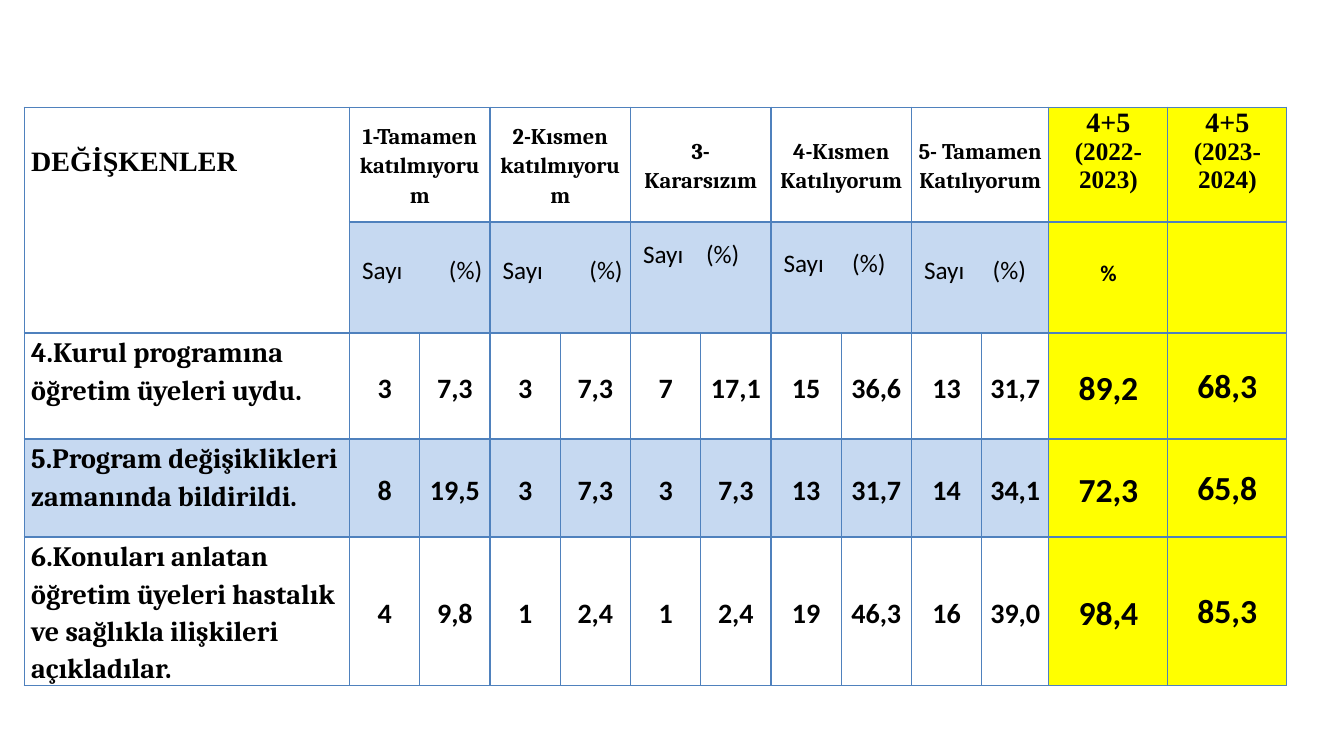
from lxml import etree
from pptx import Presentation
from pptx.dml.color import RGBColor
from pptx.enum.text import MSO_ANCHOR, PP_ALIGN
from pptx.oxml.ns import qn
from pptx.util import Pt

CENTER, LEFT = PP_ALIGN.CENTER, PP_ALIGN.LEFT
MIDDLE, TOP = MSO_ANCHOR.MIDDLE, MSO_ANCHOR.TOP

COLORS = {"border": "4F81BD", "band": "C6D9F1", "total": "FFFF00", "text": "000000"}
SERIF, ROMAN, SANS = "Cambria", "Times New Roman", "Calibri"

VARIABLES = "DEĞİŞKENLER"
ANSWERS = [
    "1-Tamamen katılmıyorum",
    "2-Kısmen katılmıyorum",
    "3-Kararsızım",
    "4-Kısmen Katılıyorum",
    "5- Tamamen Katılıyorum",
]
# tab position of "(%)" and bottom margin, one pair per answer
SUBHEADS = [(62, 0), (62, 0), (45, 23), (49, 10), (49, 0)]
YEARS = ["(2022-2023)", "(2023-2024)"]
ITEMS = [
    ("4.Kurul programına öğretim üyeleri uydu.",
     ["3", "7,3", "3", "7,3", "7", "17,1", "15", "36,6", "13", "31,7"], ["89,2", "68,3"]),
    ("5.Program değişiklikleri zamanında bildirildi.",
     ["8", "19,5", "3", "7,3", "3", "7,3", "13", "31,7", "14", "34,1"], ["72,3", "65,8"]),
    ("6.Konuları anlatan öğretim üyeleri hastalık ve sağlıkla ilişkileri açıkladılar.",
     ["4", "9,8", "1", "2,4", "1", "2,4", "19", "46,3", "16", "39,0"], ["98,4", "85,3"]),
]

COL_WIDTHS = [232.4] + [50.2] * 9 + [48, 85, 85]
ROW_HEIGHTS = [82, 79.3, 75.7, 70, 105.7]
TABLE_LEFT, TABLE_TOP = 17.3, 76.6
FIRST_TOTAL = 11


def add_border(cell, position, tag, width):
    ln = etree.Element(qn(f"a:{tag}"), w=str(Pt(width)))
    fill = etree.SubElement(ln, qn("a:solidFill"))
    etree.SubElement(fill, qn("a:srgbClr"), val=COLORS["border"])
    cell._tc.get_or_add_tcPr().insert(position, ln)


def style_cell(cell, row, col):
    if col >= FIRST_TOTAL:
        color = COLORS["total"]
    elif row == 3 or (row == 1 and col > 0):
        color = COLORS["band"]
    else:
        color = None
    if color:
        cell.fill.solid()
        cell.fill.fore_color.rgb = RGBColor.from_string(color)
    else:
        cell.fill.background()
    heavy_top = row == 1 and col > 0
    heavy_bottom = row == 0 and col > 0
    widths = [1, 1, 2.25 if heavy_top else 1, 2.25 if heavy_bottom else 1]
    for i, (tag, width) in enumerate(zip(["lnL", "lnR", "lnT", "lnB"], widths)):
        add_border(cell, i, tag, width)


def write(cell, lines, font, align=CENTER, anchor=MIDDLE, spacing=1.15, bold=True,
          margins=(5, 0, 5, 0)):
    """Fill a cell with (text, size) lines; margins are left, top, right, bottom."""
    cell.vertical_anchor = anchor
    (cell.margin_left, cell.margin_top,
     cell.margin_right, cell.margin_bottom) = map(Pt, margins)
    tf = cell.text_frame
    for i, (text, size) in enumerate(lines):
        p = tf.add_paragraph() if i else tf.paragraphs[0]
        p.text = text
        p.alignment = align
        p.line_spacing = spacing
        p.font.name = font
        p.font.size = Pt(size)
        p.font.bold = bold
        p.font.color.rgb = RGBColor.from_string(COLORS["text"])


def set_tab(cell, position):
    pPr = cell.text_frame.paragraphs[0]._p.get_or_add_pPr()
    tabs = etree.Element(qn("a:tabLst"))
    etree.SubElement(tabs, qn("a:tab"), pos=str(Pt(position)), algn="l")
    pPr.find(qn("a:defRPr")).addprevious(tabs)


def main():
    prs = Presentation()
    prs.slide_width, prs.slide_height = Pt(960), Pt(540)
    s = prs.slides.add_slide(prs.slide_layouts[6])
    table = s.shapes.add_table(
        len(ROW_HEIGHTS), len(COL_WIDTHS), Pt(TABLE_LEFT), Pt(TABLE_TOP),
        Pt(sum(COL_WIDTHS)), Pt(sum(ROW_HEIGHTS))).table
    table.first_row = table.horz_banding = False
    for column, width in zip(table.columns, COL_WIDTHS):
        column.width = Pt(width)
    for r, height in enumerate(ROW_HEIGHTS):
        table.rows[r].height = Pt(height)
        for c in range(len(COL_WIDTHS)):
            style_cell(table.cell(r, c), r, c)

    table.cell(0, 0).merge(table.cell(1, 0))
    write(table.cell(0, 0), [(VARIABLES, 20)], ROMAN, LEFT, TOP, margins=(5, 25, 5, 0))
    for i, (answer, (tab, bottom)) in enumerate(zip(ANSWERS, SUBHEADS)):
        c = 1 + 2 * i
        for r in (0, 1):
            table.cell(r, c).merge(table.cell(r, c + 1))
        write(table.cell(0, c), [(answer, 16)], SERIF)
        subhead = table.cell(1, c)
        write(subhead, [("Sayı\t(%)", 18)], SANS, LEFT, spacing=Pt(12), bold=False,
              margins=(9, 0, 2, bottom))
        set_tab(subhead, tab)
    for c, year in enumerate(YEARS, FIRST_TOTAL):
        write(table.cell(0, c), [("4+5", 20), (year, 18)], ROMAN, anchor=TOP, spacing=1.0)
    write(table.cell(1, FIRST_TOTAL), [("%", 16)], SANS, spacing=Pt(15))

    for r, (item, values, totals) in enumerate(ITEMS, 2):
        write(table.cell(r, 0), [(item, 20)], SERIF, LEFT, TOP)
        for c, value in enumerate(values, 1):
            write(table.cell(r, c), [(value, 20)], SANS)
        previous, current = totals
        write(table.cell(r, FIRST_TOTAL), [(previous, 24)], SANS)
        write(table.cell(r, FIRST_TOTAL + 1), [(current, 24)], SANS, spacing=1.0,
              margins=(1, 1, 1, 0))
    prs.save("out.pptx")


if __name__ == "__main__":
    main()
